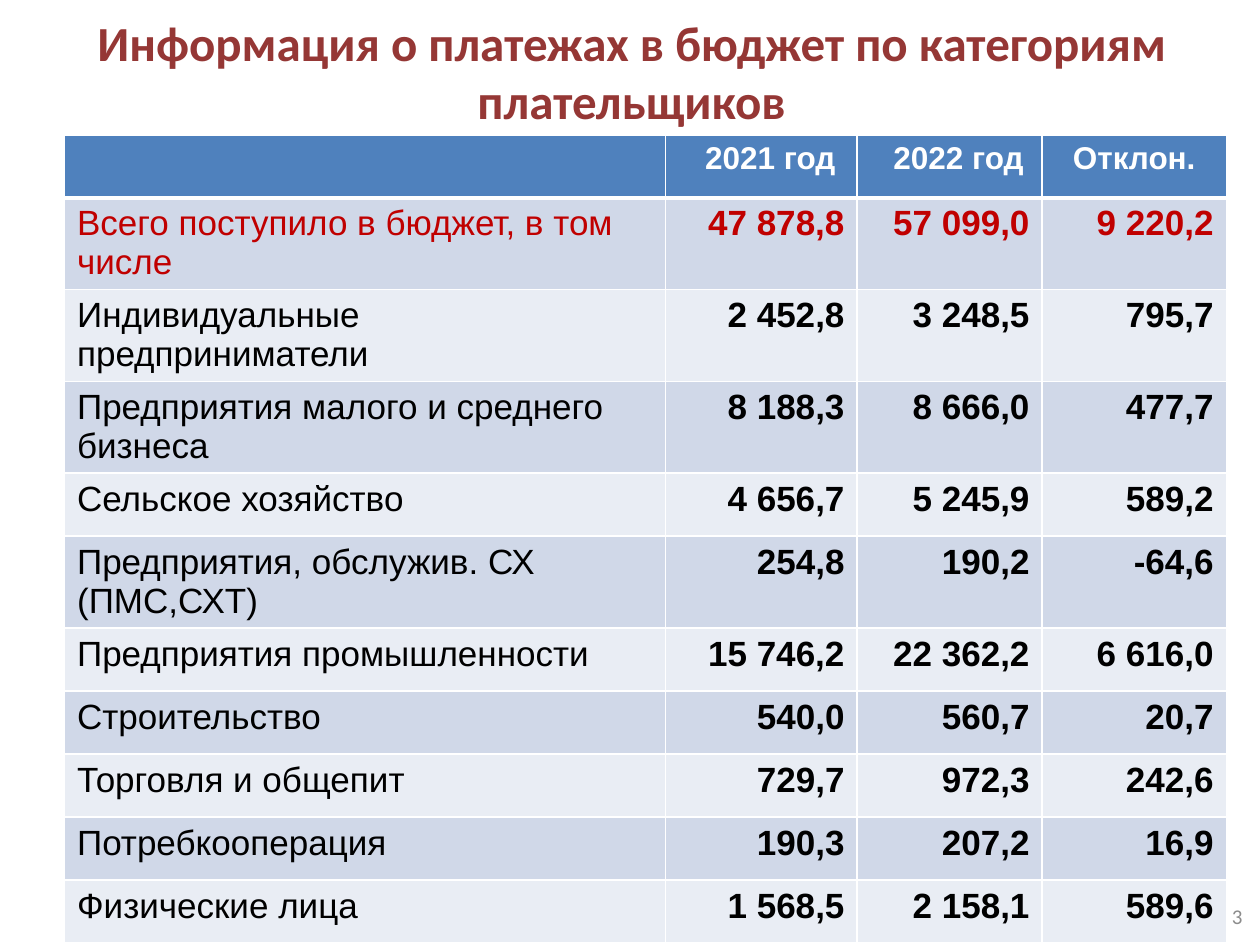
from typing import NamedTuple

from lxml.etree import SubElement
from pptx import Presentation
from pptx.dml.color import RGBColor
from pptx.enum.text import MSO_ANCHOR as Anchor, MSO_AUTO_SIZE as AutoSize, PP_ALIGN as Align
from pptx.oxml.ns import qn
from pptx.util import Cm, Pt

WHITE, BLACK, RED = "FFFFFF", "000000", "C00000"
HEADER_FILL, BANDS = "4F81BD", ("D0D8E8", "E9EDF4")
COL_WIDTHS = (12.12, 3.86, 3.73, 3.71)
ROW_HEIGHT, TWO_LINE_HEIGHT = 1.27, 1.85
YEAR_INDENT, BODY_MARGIN_BOTTOM = 0.61, 0.0


class Payer(NamedTuple):
    name: str
    y2021: str
    y2022: str
    change: str
    color: str = BLACK
    height: float = ROW_HEIGHT


HEADINGS = ("", "2021 год", "2022 год", "Отклон.")
PAYERS = (
    Payer("Всего поступило в бюджет, в том числе", "47 878,8", "57 099,0", "9 220,2",
          RED, TWO_LINE_HEIGHT),
    Payer("Индивидуальные предприниматели", "2 452,8", "3 248,5", "795,7",
          height=TWO_LINE_HEIGHT),
    Payer("Предприятия малого и среднего бизнеса", "8 188,3", "8 666,0", "477,7",
          height=TWO_LINE_HEIGHT),
    Payer("Сельское хозяйство", "4 656,7", "5 245,9", "589,2"),
    Payer("Предприятия, обслужив. СХ (ПМС,СХТ)", "254,8", "190,2", "-64,6",
          height=TWO_LINE_HEIGHT),
    Payer("Предприятия промышленности", "15 746,2", "22 362,2", "6 616,0"),
    Payer("Строительство", "540,0", "560,7", "20,7"),
    Payer("Торговля и общепит", "729,7", "972,3", "242,6"),
    Payer("Потребкооперация", "190,3", "207,2", "16,9"),
    Payer("Физические лица", "1 568,5", "2 158,1", "589,6"),
)


def rgb(value: str) -> RGBColor:
    return RGBColor.from_string(value)


def write(tf, text: str, *, size: float, color: str, font: str = "Arial",
          bold: bool = False, align=Align.LEFT) -> None:
    p = tf.paragraphs[0]
    p.alignment = align
    r = p.add_run()
    r.text = text
    r.font.name, r.font.size, r.font.bold = font, Pt(size), bold
    r.font.color.rgb = rgb(color)


def style_cell(cell, fill: str, top: float = 1, bottom: float = 1) -> None:
    """White rules on all sides, then the fill."""
    tc_pr = cell._tc.get_or_add_tcPr()
    for tag, width in (("a:lnL", 1), ("a:lnR", 1), ("a:lnT", top), ("a:lnB", bottom)):
        line = SubElement(tc_pr, qn(tag), w=str(Pt(width)))
        SubElement(SubElement(line, qn("a:solidFill")), qn("a:srgbClr"), val=WHITE)
    cell.fill.solid()
    cell.fill.fore_color.rgb = rgb(fill)


def add_payments_table(slide) -> None:
    height = ROW_HEIGHT + sum(payer.height for payer in PAYERS)
    table = slide.shapes.add_table(len(PAYERS) + 1, len(HEADINGS), Cm(1.3), Cm(2.72),
                                   Cm(sum(COL_WIDTHS)), Cm(height)).table
    for column, width in zip(table.columns, COL_WIDTHS):
        column.width = Cm(width)

    # Heading row
    table.rows[0].height = Cm(ROW_HEIGHT)
    for cell, heading in zip(table.rows[0].cells, HEADINGS):
        style_cell(cell, HEADER_FILL, bottom=3)
        if heading:
            write(cell.text_frame, heading, size=18, color=WHITE, bold=True,
                  align=Align.CENTER)
        if heading.endswith("год"):
            cell.margin_left = Cm(YEAR_INDENT)

    # One banded row per payer category
    for i, payer in enumerate(PAYERS):
        row = table.rows[i + 1]
        row.height = Cm(payer.height)
        values = (payer.name, payer.y2021, payer.y2022, payer.change)
        for j, (cell, value) in enumerate(zip(row.cells, values)):
            style_cell(cell, BANDS[i % 2], top=1 if i else 3)
            cell.margin_bottom = Cm(BODY_MARGIN_BOTTOM)
            write(cell.text_frame, value, size=20, color=payer.color, bold=j > 0,
                  align=Align.RIGHT if j else Align.LEFT)


def main() -> None:
    prs = Presentation()
    prs.slide_width, prs.slide_height = Cm(25.4), Cm(19.05)
    slide = prs.slides.add_slide(prs.slide_layouts[5])

    # Title
    title = slide.shapes.title
    title.left, title.top, title.width, title.height = Cm(1.3), Cm(0.33), Cm(22.86), Cm(2.2)
    tf = title.text_frame
    tf.auto_size, tf.vertical_anchor = AutoSize.NONE, Anchor.MIDDLE
    write(tf, "Информация о платежах в бюджет по категориям плательщиков", size=28,
          color="953735", font="Calibri", bold=True, align=Align.CENTER)

    # Slide number
    number = slide.shapes.add_textbox(Cm(19.38), Cm(17.96), Cm(5.92), Cm(1.02))
    tf = number.text_frame
    tf.word_wrap, tf.vertical_anchor = True, Anchor.MIDDLE
    write(tf, "3", size=12, color="8C8C8C", font="Calibri", align=Align.RIGHT)

    add_payments_table(slide)
    prs.save("out.pptx")


if __name__ == "__main__":
    main()
